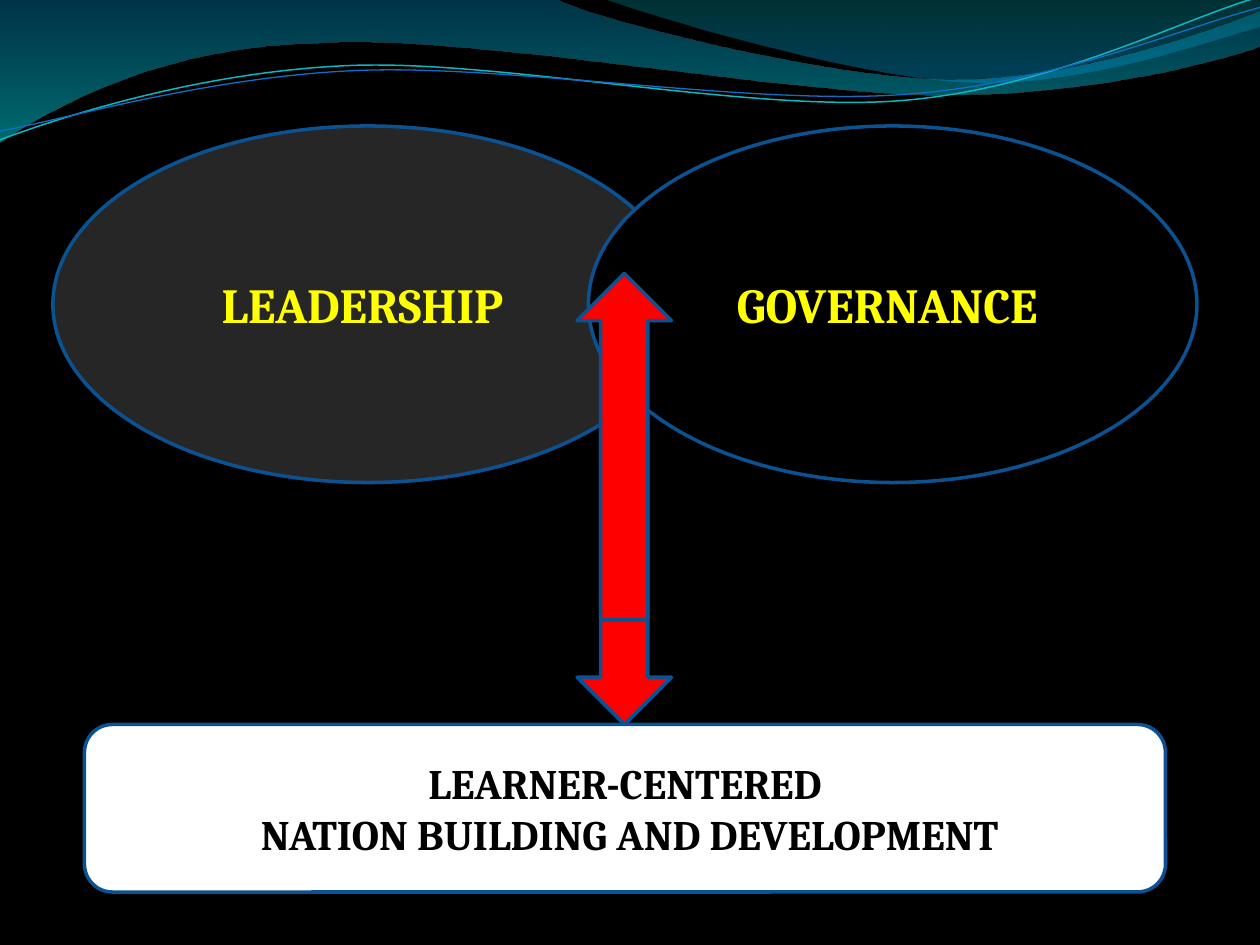
import math

from lxml import etree
from pptx import Presentation
from pptx import util as u
from pptx.dml import color
from pptx.enum import shapes, text
from pptx.oxml import ns

KIND = shapes.MSO_SHAPE
EDGE = "0B5292"
TILT = 2.7


def tint(code):
    return color.RGBColor.from_string(code)


def turn(spot, hub, angle):
    x, y = spot[0] - hub[0], spot[1] - hub[1]
    s, c = math.sin(math.radians(angle)), math.cos(math.radians(angle))
    return hub[0] + x * c - y * s, hub[1] + x * s + y * c


def trace(slide, left, top, start, rest, close=True, hub=(0, 0), tilt=0):
    flat = [start] + [seg[i:i + 2] for seg in rest for i in range(0, len(seg), 2)]
    spots = [(u.Inches(left + x), u.Inches(top + y))
             for x, y in (turn(spot, hub, tilt) for spot in flat)]
    pen = slide.shapes.build_freeform(*spots[0], scale=1.0)
    pen.add_line_segments(spots[1:], close=close)
    shape = pen.convert_to_shape()
    shape.rotation = -tilt
    shape.shadow.inherit = False
    steps = iter(list(shape.element.iter(ns.qn("a:lnTo"))))
    for seg in rest:
        step = next(steps)
        if len(seg) == 6:
            step.addprevious(bend := etree.Element(ns.qn("a:cubicBezTo")))
            for part in (step, next(steps), next(steps)):
                bend.append(part[0])
                part.getparent().remove(part)
    return shape


def fade(shape, stops):
    shape.line.fill.background()
    shape.fill.gradient()
    shape.fill.gradient_angle = 270
    for stop, (place, code, alpha) in zip(shape.fill.gradient_stops, stops):
        stop.position = place
        stop.color.rgb = tint(code)
    tones = shape.element.spPr.iter(ns.qn("a:srgbClr"))
    for tone, (place, code, alpha) in zip(tones, stops):
        etree.SubElement(tone, ns.qn("a:alpha"), val=str(alpha * 1000))


def waves(slide, left, top):
    bands = [
        ((0, 0),
         [(4.4, -0.01), (4.76, 0.17, 6.64, 0.63, 7.58, 0.63),
          (8.53, 0.63, 9.58, 0.26, 10, 0.09), (10.01, 0.36),
          (9.83, 0.44, 8.7, 0.76, 7.46, 0.75),
          (6.22, 0.75, 3.82, 0.28, 2.57, 0.34),
          (1.29, 0.36, 0.46, 0.83, -0.01, 1.13), (0, 0)],
         [(0, "0074A1", 45), (1, "00C6CF", 55)]),
        ((4.79, -0.01),
         [(5.09, 0.11, 6.82, 0.62, 7.69, 0.65),
          (8.56, 0.69, 9.61, 0.32, 10, 0.21), (10, 0), (4.79, -0.01)],
         [(0, "00A1A9", 30), (0.8, "008BBF", 45)]),
    ]
    for start, rest, stops in bands:
        fade(trace(slide, left, top, start, rest), stops)

    lines = [
        ((0, 1.11),
         [(0.48, 0.93, 1.58, 0.57, 2.77, 0.52),
          (3.95, 0.47, 5.93, 0.89, 7.13, 0.8),
          (8.33, 0.71, 9.38, 0.15, 9.98, -0.02)], (4.99, 0.57), "0AB8BF", 0.85),
        ((0, 1.04),
         [(0.47, 0.96, 1.64, 0.61, 2.83, 0.56),
          (4.03, 0.51, 5.97, 0.84, 7.17, 0.75),
          (8.36, 0.67, 9.41, 0.21, 10, 0.06)], (5, 0.59), "0F6FC6", 0.75),
    ]
    for start, rest, hub, code, width in lines:
        shape = trace(slide, left, top, start, rest, close=False, hub=hub, tilt=TILT)
        shape.fill.background()
        shape.line.color.rgb = tint(code)
        shape.line.width = u.Pt(width)


def block(slide, kind, box, fill):
    shape = slide.shapes.add_shape(kind, *map(u.Inches, box))
    shape.shadow.inherit = False
    shape.fill.solid()
    shape.fill.fore_color.rgb = tint(fill)
    shape.line.color.rgb = tint(EDGE)
    shape.line.width = u.Pt(2)
    return shape


def write(shape, words, size, code, font="Cambria", bold=True):
    frame = shape.text_frame
    frame.word_wrap = True
    frame.vertical_anchor = text.MSO_ANCHOR.MIDDLE
    frame.text = words
    for para in frame.paragraphs:
        para.alignment = text.PP_ALIGN.CENTER
        for run in para.runs:
            run.font.name = font
            run.font.size = u.Pt(size)
            run.font.bold = bold
            run.font.color.rgb = tint(code)


def pair(slide, left, top, height):
    ovals = [("LEADERSHIP ", 0, 5, "262626"), ("GOVERNANCE ", 4.25, 4.83, "000000")]
    for words, shift, width, fill in ovals:
        oval = block(slide, KIND.OVAL, (left + shift, top, width, height), fill)
        write(oval, words, size=28, code="FFFF00")


def goal(slide, box):
    panel = block(slide, KIND.ROUNDED_RECTANGLE, box, "FFFFFF")
    write(panel, "LEARNER-CENTERED\n NATION BUILDING AND DEVELOPMENT",
          size=24, code="000000")


def arrow(slide, kind, box):
    block(slide, kind, box, "FF0000")


def main():
    deck = Presentation()
    deck.slide_width = u.Inches(10)
    deck.slide_height = u.Inches(7.5)
    slide = deck.slides.add_slide(deck.slide_layouts[6])
    slide.background.fill.solid()
    slide.background.fill.fore_color.rgb = tint("000000")
    waves(slide, 0, 0)
    pair(slide, 0.42, 1, 2.83)
    arrow(slide, KIND.DOWN_ARROW, (4.58, 3.33, 0.75, 2.42))
    goal(slide, (0.67, 5.75, 8.58, 1.33))
    arrow(slide, KIND.UP_ARROW, (4.58, 2.17, 0.75, 2.75))
    deck.save("out.pptx")


if __name__ == "__main__":
    main()
